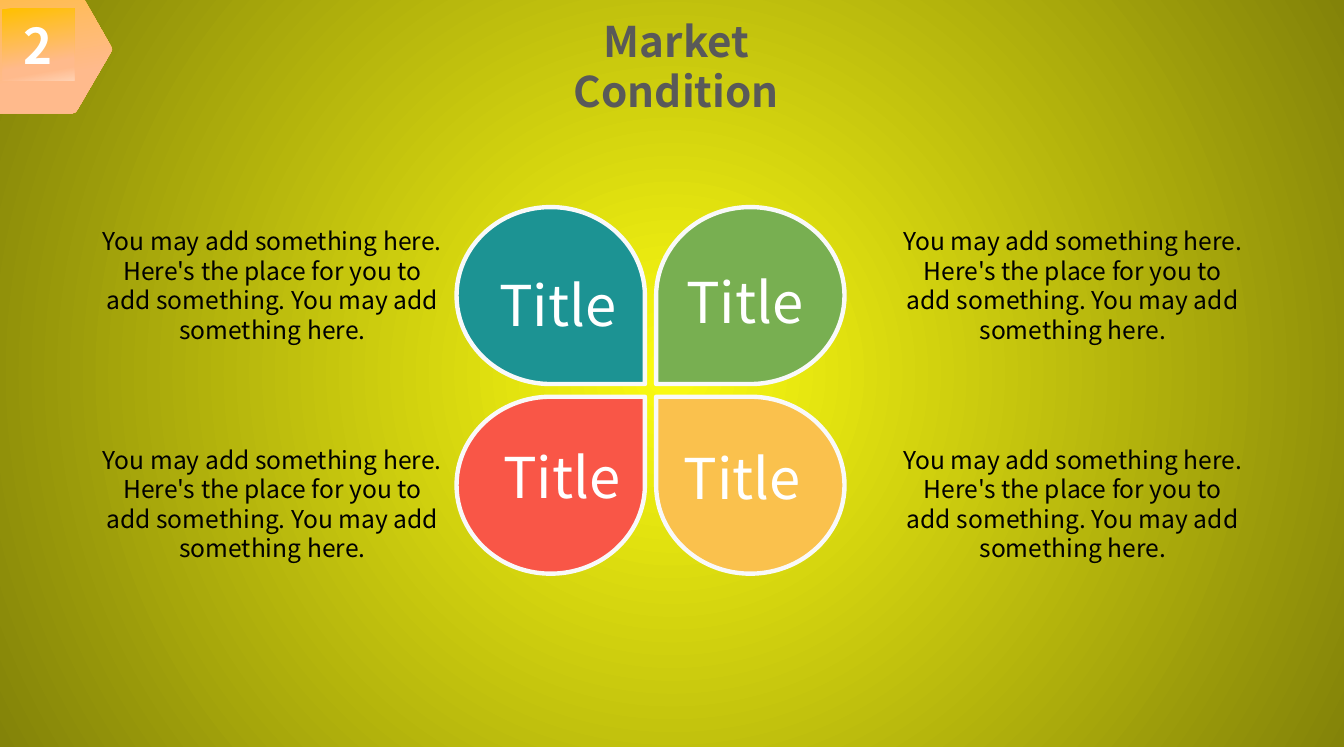
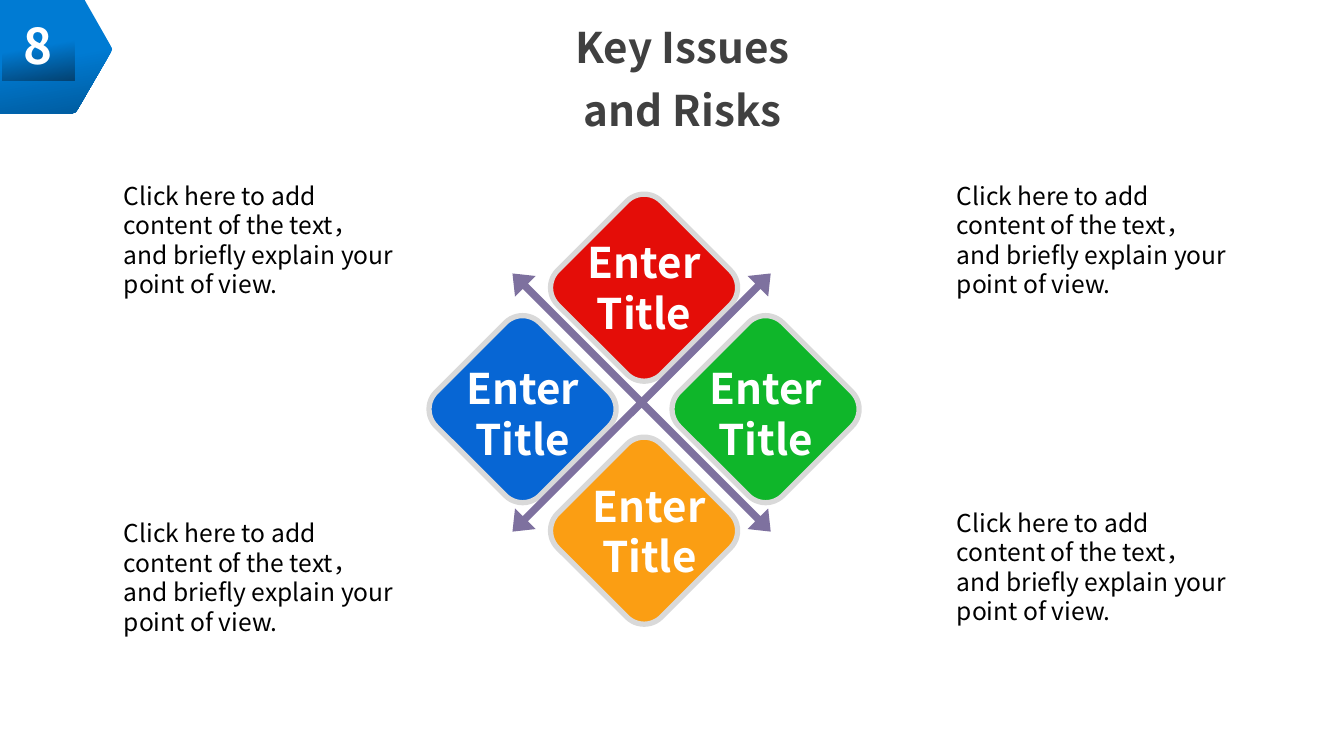
from dataclasses import dataclass

from lxml import etree
from pptx import Presentation
from pptx import util as u
from pptx.dml import color
from pptx.enum import shapes, text
from pptx.oxml import ns

Pt = u.Pt
SHAPE = shapes.MSO_SHAPE
ALIGN = text.PP_ALIGN


@dataclass(frozen=True)
class Theme:
    # Type
    font: str = "Noto Sans CJK SC"
    body_size: int = 14
    heading_size: int = 24
    badge_size: int = 28
    petal_size: int = 32
    # Colours
    black: str = "000000"
    white: str = "FFFFFF"
    title_soft: str = "595959"
    title_dark: str = "404040"
    petal_edge: str = "F9F9F9"
    diamond_edge: str = "D9D9D9"
    arrows: str = "7E719F"
    teal: str = "1C9393"
    leaf: str = "78AF51"
    coral: str = "F95647"
    amber: str = "FAC14D"
    red: str = "E40D08"
    blue: str = "0766D4"
    green: str = "0FB62A"
    orange: str = "FB9E13"
    # Gradients: (position in percent, colour)
    glow: tuple = ((0, "FBFB11"), (100, "838309"))
    warm_tag: tuple = ((0, "FFBC50"), (65, "FFBA8C"), (100, "FFBA8C"))
    warm_number: tuple = ((0, "FFC000"), (74, "FFBA8C"), (83, "FFBA8C"), (100, "FFD1B2"))
    cool_tag: tuple = ((0, "007BD3"), (50, "007BD3"), (100, "005A9C"))
    cool_number: tuple = ((0, "007BD3"), (52, "007BD3"), (100, "034373"))


THEME = Theme()


def rgb(value):
    return color.RGBColor.from_string(value)


def write_text(frame, content, size=THEME.body_size, ink=THEME.black, bold=False,
               align=ALIGN.LEFT, spacing=None, insets=(7.2, 3.6), middle=False):
    """Fill a text frame; each line of content becomes a paragraph."""
    frame.word_wrap = True
    frame.margin_left = frame.margin_right = Pt(insets[0])
    frame.margin_top = frame.margin_bottom = Pt(insets[1])
    frame.vertical_anchor = text.MSO_ANCHOR.MIDDLE if middle else text.MSO_ANCHOR.TOP
    frame.text = content
    for paragraph in frame.paragraphs:
        paragraph.alignment = align
        if spacing:
            paragraph.line_spacing = spacing
        for run in paragraph.runs:
            run.font.name = THEME.font
            run.font.size = Pt(size)
            run.font.bold = bold
            run.font.color.rgb = rgb(ink)
            east_asian = etree.SubElement(run.font._element, ns.qn("a:ea"))
            east_asian.set("typeface", THEME.font)


def set_gradient(fill, owner, stops, angle=None):
    """Linear gradient at a clockwise angle, or circular from the centre."""
    fill.gradient()
    gradient = owner.find(".//" + ns.qn("a:gradFill"))
    for child in list(gradient):
        gradient.remove(child)
    stop_list = etree.SubElement(gradient, ns.qn("a:gsLst"))
    for position, value in stops:
        stop = etree.SubElement(stop_list, ns.qn("a:gs"), pos=str(position * 1000))
        etree.SubElement(stop, ns.qn("a:srgbClr"), val=value)
    if angle is not None:
        etree.SubElement(gradient, ns.qn("a:lin"), ang=str(angle * 60000), scaled="0")
    else:
        circle = etree.SubElement(gradient, ns.qn("a:path"), path="circle")
        etree.SubElement(circle, ns.qn("a:fillToRect"),
                         l="50000", t="50000", r="50000", b="50000")


class Deck:
    TAG_OUTLINE = ((0, 0), (48.2, 0), (63, 26), (63.8, 28), (63, 30),
                   (44, 62.6), (42.8, 64), (41, 64.6), (0, 64.6))

    def __init__(self, theme):
        self.theme = theme
        self.prs = Presentation()
        self.prs.slide_width, self.prs.slide_height = Pt(765.4), Pt(425.5)
        self.slide = None

    def new_slide(self, glow=None):
        self.slide = self.prs.slides.add_slide(self.prs.slide_layouts[6])
        fill = self.slide.background.fill
        if glow:
            set_gradient(fill, self.slide.element, glow)
        else:
            fill.solid()
            fill.fore_color.rgb = rgb(self.theme.white)

    def label(self, content, left, top, width, height, **style):
        box = self.slide.shapes.add_textbox(Pt(left), Pt(top), Pt(width), Pt(height))
        write_text(box.text_frame, content, **style)

    def title(self, content, left, top, width, height, ink, spacing=None):
        self.label(content, left, top, width, height, size=self.theme.heading_size,
                   ink=ink, bold=True, align=ALIGN.CENTER, spacing=spacing, insets=(0, 0))

    def shape(self, kind, left, top, width, height, fill=None, edge=None,
              edge_width=0, rotation=0, flips=""):
        item = self.slide.shapes.add_shape(kind, Pt(left), Pt(top), Pt(width), Pt(height))
        item.shadow.inherit = False
        item.rotation = rotation
        for axis in flips:
            item.element.spPr.xfrm.set("flip" + axis, "1")
        if fill:
            item.fill.solid()
            item.fill.fore_color.rgb = rgb(fill)
        if edge:
            item.line.color.rgb = rgb(edge)
            item.line.width = Pt(edge_width)
        else:
            item.line.fill.background()
        return item

    def badge(self, number, tag_stops, number_stops):
        """Section number on an arrow-shaped tag in the corner."""
        corners = [(Pt(x), Pt(y)) for x, y in self.TAG_OUTLINE]
        builder = self.slide.shapes.build_freeform(*corners[0], scale=1.0)
        builder.add_line_segments(corners[1:], close=True)
        tag = builder.convert_to_shape()
        tag.shadow.inherit = False
        tag.line.fill.background()
        set_gradient(tag.fill, tag.element, tag_stops, 80)
        square = self.shape(SHAPE.RECTANGLE, 1.4, 5, 41, 41)
        set_gradient(square.fill, square.element, number_stops, 80)
        write_text(square.text_frame, number, size=self.theme.badge_size,
                   ink=self.theme.white, bold=True, align=ALIGN.CENTER, middle=True)


def market_condition(deck):
    theme = deck.theme
    deck.new_slide(theme.glow)
    deck.badge("2", theme.warm_tag, theme.warm_number)

    # Four petals with their points to the centre: column, row, colour, flips, label place
    columns, rows = (260, 373.7), (118, 226)
    petals = (
        (0, 0, theme.teal, "V", (277.2, 150.5)),
        (1, 1, theme.amber, "H", (382.3, 249.1)),
        (1, 0, theme.leaf, "HV", (383.8, 149)),
        (0, 1, theme.coral, "", (279.4, 248.4)),
    )
    for column, row, fill, flips, _ in petals:
        deck.shape(SHAPE.TEAR, columns[column], rows[row], 107.3, 100.8, fill=fill,
                   edge=theme.petal_edge, edge_width=2.5, flips=flips)
    for *_, place in petals:
        deck.label("Title", *place, 88, 46, size=theme.petal_size, ink=theme.white)

    # Explanations beside the petals
    for left in (50.4, 506.2):
        for top in (125.3, 249.8):
            deck.label("You may add something here. Here's the place for you to add "
                       "something. You may add something here.",
                       left, top, 209.5, 85.7, align=ALIGN.CENTER)

    deck.title("Market Condition", 306, 8.6, 158.4, 58.3, theme.title_soft)


def key_issues(deck):
    theme = deck.theme
    deck.new_slide()
    deck.badge("8", theme.cool_tag, theme.cool_number)

    # Diamonds around a centre: direction, colour, label shift
    center_x, center_y, reach, side = 366.8, 233.1, 69.2, 83.5
    diamonds = (
        (0, 1, theme.orange, 3, 0.5),
        (0, -1, theme.red, 0, 0),
        (-1, 0, theme.blue, 0, 2.7),
        (1, 0, theme.green, 0, 2.7),
    )
    for dx, dy, fill, *_ in diamonds:
        deck.shape(SHAPE.ROUNDED_RECTANGLE, center_x + dx * reach - side / 2,
                   center_y + dy * reach - side / 2, side, side, fill=fill,
                   edge=theme.diamond_edge, edge_width=3, rotation=45)

    # Crossed arrows between the diamonds
    cross = deck.shape(SHAPE.QUAD_ARROW, 261.4, 125.3, 208, 208,
                       fill=theme.arrows, rotation=45)
    for index, share in enumerate((0.02, 0.04, 0.05)):
        cross.adjustments[index] = share

    label_width, label_height = 78.5, 64
    for dx, dy, _, shift_x, shift_y in diamonds:
        deck.label("Enter\nTitle", center_x + dx * reach + shift_x - label_width / 2,
                   center_y + dy * reach + shift_y - label_height / 2,
                   label_width, label_height, size=theme.heading_size, ink=theme.white,
                   bold=True, align=ALIGN.CENTER, insets=(5.5, 2.8))

    deck.title("Key Issues and Risks", 305.3, 5, 167, 72.7, theme.title_dark, spacing=1.25)

    # Explanations in the corners
    for left, top in ((63.4, 99.4), (63.4, 291.6), (537.8, 99.4), (537.8, 285.8)):
        deck.label("Click here to add content of the text，and briefly explain "
                   "your point of view.", left, top, 169.2, 75)


def main():
    deck = Deck(THEME)
    market_condition(deck)
    key_issues(deck)
    deck.prs.save("out.pptx")


if __name__ == "__main__":
    main()
